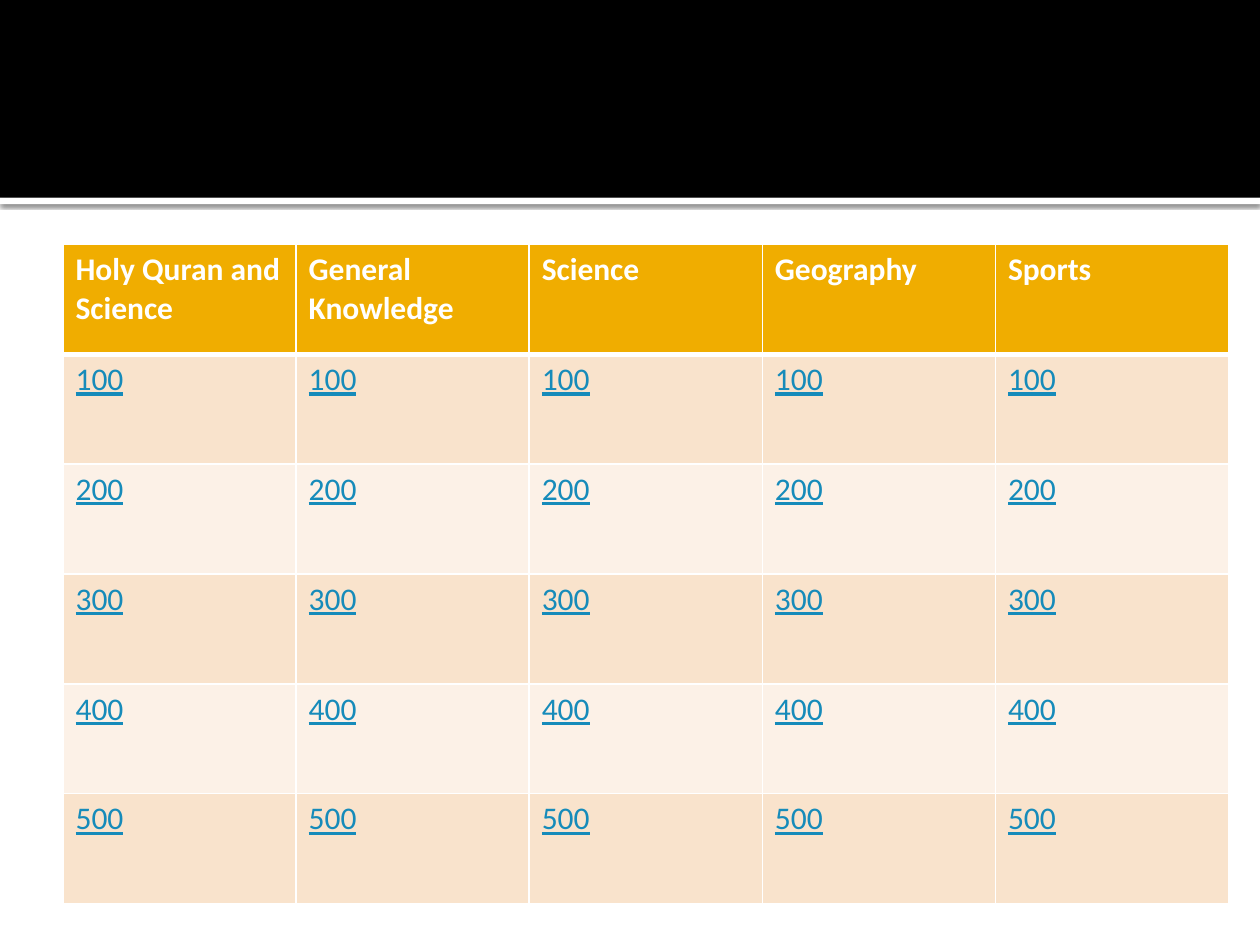
from lxml.etree import SubElement
from pptx import Presentation
from pptx.dml.color import RGBColor
from pptx.enum.shapes import MSO_SHAPE
from pptx.oxml.ns import qn
from pptx.util import Inches, Pt

WHITE = RGBColor(0xFF, 0xFF, 0xFF)
BLACK = RGBColor(0, 0, 0)
GOLD = RGBColor(0xF0, 0xAD, 0x00)
PEACH = RGBColor(0xF9, 0xE3, 0xCC)
CREAM = RGBColor(0xFC, 0xF1, 0xE7)
BLUE = RGBColor(0x16, 0x8B, 0xBA)

TOPICS = ["Holy Quran and Science", "General Knowledge", "Science", "Geography", "Sports"]
POINTS = ["100", "200", "300", "400", "500"]


def write(frame, text, font="Calibri", size=18, color=BLACK, bold=False, under=False):
    run = frame.paragraphs[0].add_run()
    run.text = text
    run.font.name = font
    run.font.size = Pt(size)
    run.font.color.rgb = color
    run.font.bold = bold
    run.font.underline = under


def add_color(parent, color):
    fill = SubElement(parent, qn("a:solidFill"))
    return SubElement(fill, qn("a:srgbClr"), val=str(color))


class Board:
    def __init__(self, slide, font="Calibri", size=18):
        self.slide = slide
        self.font = font
        self.size = size

    def band(self, top, height, color):
        shape = self.slide.shapes.add_shape(
            MSO_SHAPE.RECTANGLE, 0, Inches(top), Inches(10), Inches(height))
        shape.fill.solid()
        shape.fill.fore_color.rgb = color
        shape.line.fill.background()
        shape.shadow.inherit = False
        return shape

    def shade(self, shape, blur, gap, alpha):
        effect = shape.element.spPr.find(qn("a:effectLst"))
        shadow = SubElement(effect, qn("a:outerShdw"), blurRad=str(Pt(blur)),
                            dist=str(Pt(gap)), dir="5400000", rotWithShape="0")
        color = SubElement(shadow, qn("a:srgbClr"), val=str(BLACK))
        SubElement(color, qn("a:alpha"), val=str(alpha * 1000))

    def border(self, cell, top, bottom):
        props = cell._tc.get_or_add_tcPr()
        for side, width in (("L", 1), ("R", 1), ("T", top), ("B", bottom)):
            add_color(SubElement(props, qn("a:ln" + side), w=str(Pt(width))), WHITE)

    def table(self, rows, left, top, width, height):
        table = self.slide.shapes.add_table(
            len(rows), len(rows[0]), Inches(left), Inches(top),
            Inches(width), Inches(height)).table
        for i, row in enumerate(rows):
            head = i == 0
            fill = GOLD if head else PEACH if i % 2 else CREAM
            for j, text in enumerate(row):
                cell = table.cell(i, j)
                self.border(cell, 3 if i == 1 else 1, 3 if head else 1)
                cell.fill.solid()
                cell.fill.fore_color.rgb = fill
                write(cell.text_frame, text, font=self.font, size=self.size,
                      color=WHITE if head else BLUE, bold=head, under=not head)


def main():
    deck = Presentation()
    deck.slide_width, deck.slide_height = Inches(10), Inches(7.5)
    board = Board(deck.slides.add_slide(deck.slide_layouts[6]))
    strip = board.band(1.57, 0.05, WHITE)
    board.shade(strip, blur=2.5, gap=0.8, alpha=60)
    board.band(0, 1.57, BLACK)
    rows = [TOPICS] + [[point] * len(TOPICS) for point in POINTS]
    board.table(rows, 0.5, 1.94, 9.25, 5.23)
    deck.save("out.pptx")


if __name__ == "__main__":
    main()
